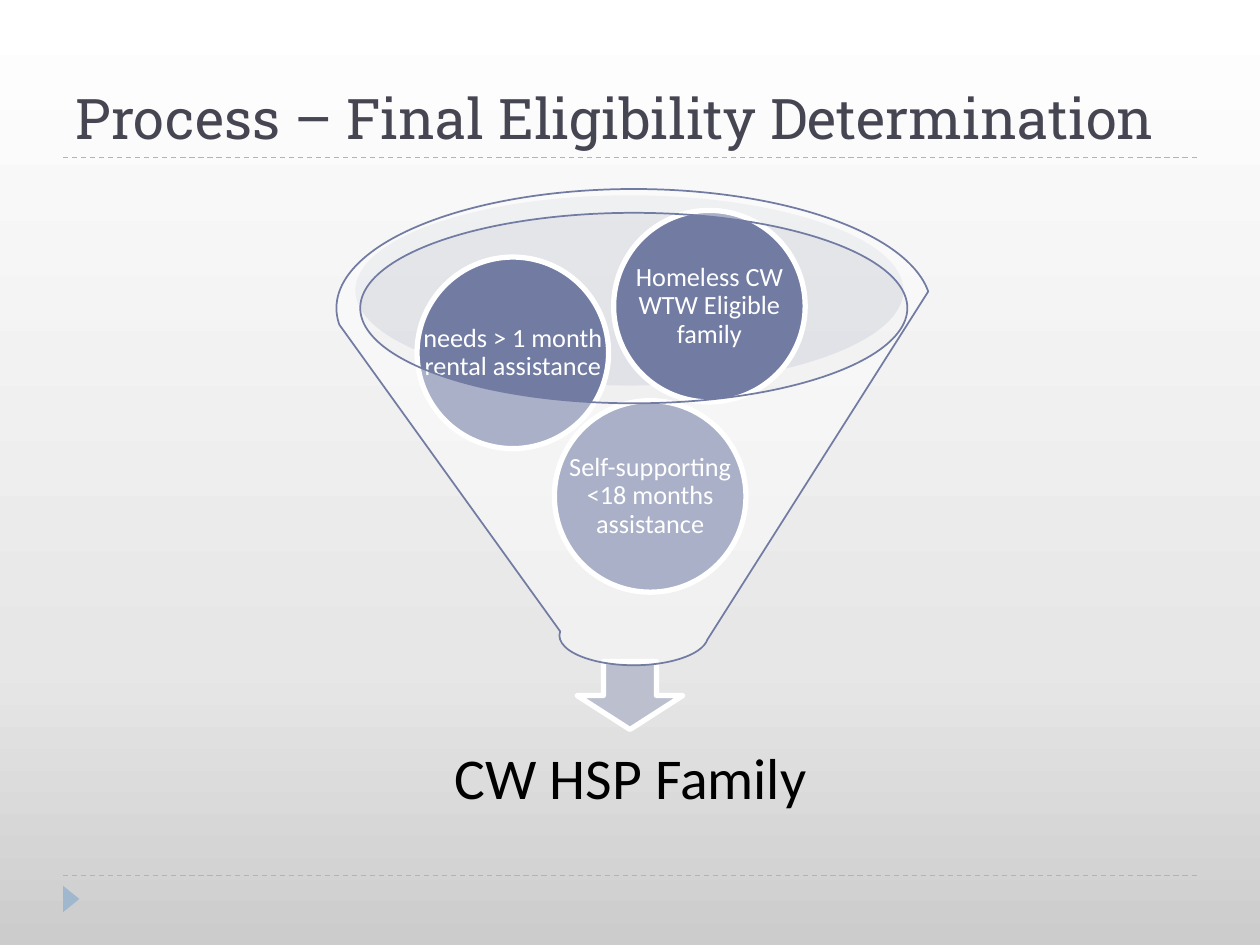
from copy import deepcopy

from lxml.etree import SubElement
from pptx import Presentation
from pptx.dml.color import RGBColor
from pptx.enum.dml import MSO_LINE
from pptx.enum.shapes import MSO_CONNECTOR, MSO_SHAPE
from pptx.enum.text import MSO_ANCHOR, MSO_AUTO_SIZE, PP_ALIGN
from pptx.oxml.ns import qn
from pptx.util import Inches, Pt

BLUE, PALE, WHITE = "727CA3", "9FB8CD", "FFFFFF"
BALL = 1.52
BALLS = [
    (4.4, 3.18, "Self-supporting <18 months assistance"),
    (3.31, 2.04, "needs > 1 month rental assistance"),
    (4.87, 1.67, "Homeless CW WTW Eligible family"),
]


def tint(color, code):
    """Set a colour from a hex string."""
    color.rgb = RGBColor.from_string(code)


def apply(item, values):
    """Set each attribute of an item from a dict."""
    for name, value in values.items():
        setattr(item, name, value)


def shade(slide, stops):
    """Give the slide a gradient that rises from the bottom."""
    fill = slide.background.fill
    fill.gradient()
    fill.gradient_angle = 90
    last = list(slide.element.iter(qn("a:gs")))[-1]
    last.addnext(deepcopy(last))
    for stop, (place, code) in zip(fill.gradient_stops, stops):
        stop.position = place
        tint(stop.color, code)


def rule(slide, top):
    """Draw a dashed line between the side margins."""
    line = slide.shapes.add_connector(
        MSO_CONNECTOR.STRAIGHT, *map(Inches, (0.5, top, 9.5, top)))
    apply(line.line, {"width": Pt(0.75), "dash_style": MSO_LINE.DASH})
    tint(line.line.color, PALE)
    SubElement(line.element.spPr, qn("a:effectLst"))


def form(slide, kind, box, fill, edge=None, width=3, alpha=None):
    """Draw a preset shape with an optional edge and opacity."""
    shape = slide.shapes.add_shape(kind, *map(Inches, box))
    shape.shadow.inherit = False
    shape.fill.solid()
    tint(shape.fill.fore_color, fill)
    if alpha:
        code = shape.element.spPr.find(qn("a:solidFill"))[0]
        SubElement(code, qn("a:alpha"), val=str(alpha * 1000))
    if edge:
        tint(shape.line.color, edge)
        shape.line.width = Pt(width)
    else:
        shape.line.fill.background()
    return shape


def write(para, text, size, font, code):
    """Put one formatted run in a paragraph."""
    run = para.add_run()
    run.text = text
    apply(run.font, {"size": Pt(size), "name": font})
    tint(run.font.color, code)


def label(slide, box, text, size, code, inset):
    """Add a centred text box."""
    frame = slide.shapes.add_textbox(*map(Inches, box)).text_frame
    sides = ("left", "top", "right", "bottom")
    apply(frame, {f"margin_{side}": Inches(inset) for side in sides})
    apply(frame, {"word_wrap": True, "vertical_anchor": MSO_ANCHOR.MIDDLE})
    para = frame.paragraphs[0]
    apply(para, {"alignment": PP_ALIGN.CENTER, "line_spacing": 0.9})
    write(para, text, size, "Calibri", code)


def head(slide, text):
    """Place and fill the title."""
    title = slide.shapes.title
    box = dict(zip(("left", "top", "width", "height"),
                   map(Inches, (0.5, 0.17, 9, 1.08))))
    apply(title, box)
    frame = title.text_frame
    apply(frame, {"word_wrap": True, "auto_size": MSO_AUTO_SIZE.NONE,
                  "vertical_anchor": MSO_ANCHOR.BOTTOM})
    para = frame.paragraphs[0]
    para.alignment = PP_ALIGN.LEFT
    write(para, text, 32, "Roboto Slab", "464653")


def main():
    """Build and save the slide."""
    deck = Presentation()
    apply(deck, {"slide_width": Inches(10), "slide_height": Inches(7.5)})
    slide = deck.slides.add_slide(deck.slide_layouts[5])
    shade(slide, [(0, "CCCCCC"), (0.3, "E7E7E7"), (1, WHITE)])
    for top in (6.95, 1.25):
        rule(slide, top)
    mark = form(slide, MSO_SHAPE.ISOSCELES_TRIANGLE,
                (0.46, 7.07, 0.21, 0.13), PALE)
    mark.rotation = 90
    head(slide, "Process – Final Eligibility Determination")
    form(slide, MSO_SHAPE.OVAL, (2.82, 1.55, 4.35, 1.51), "C9CCD7", alpha=40)
    form(slide, MSO_SHAPE.DOWN_ARROW, (4.58, 5.25, 0.84, 0.54), "BCBFCE", WHITE)
    label(slide, (2.98, 5.69, 4.05, 1.01), "CW HSP Family", 33, "000000", 0.26)
    for left, top, text in BALLS:
        box = (left, top, BALL, BALL)
        form(slide, MSO_SHAPE.OVAL, box, BLUE, WHITE)
        label(slide, box, text, 15, WHITE, 0.02)
    form(slide, MSO_SHAPE.FUNNEL, (2.67, 1.5, 4.72, 3.78), WHITE, BLUE, 1, 40)
    deck.save("out.pptx")


if __name__ == "__main__":
    main()
